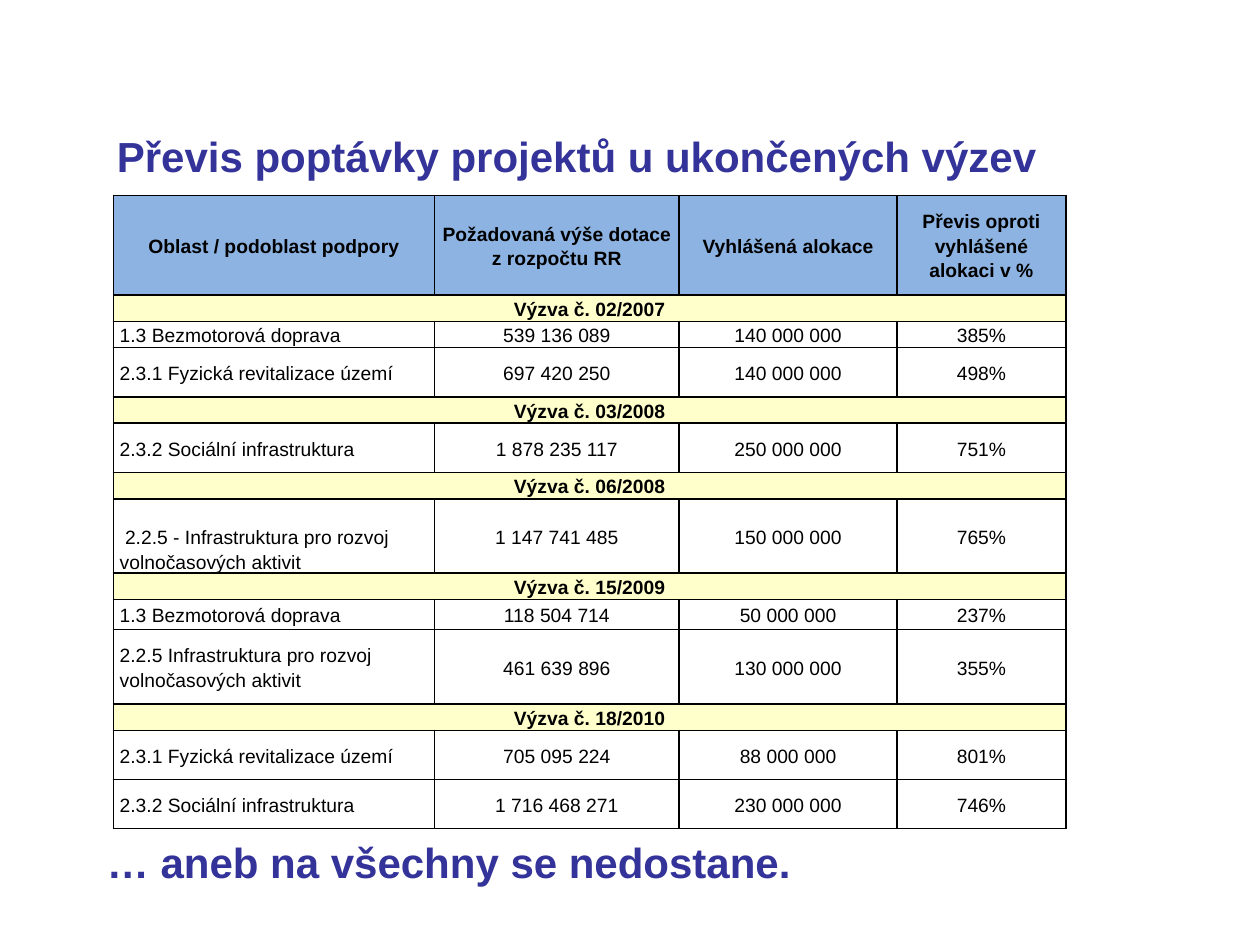
from typing import NamedTuple
from lxml import etree
from pptx import Presentation
from pptx import util as u
from pptx.dml import color
from pptx.enum import text
from pptx.oxml import ns

FONT = "Arial"
NAVY, BLACK, BLUE, CREAM = "333399", "000000", "8DB3E2", "FFFFCC"
MID, LOW = text.MSO_ANCHOR.MIDDLE, text.MSO_ANCHOR.BOTTOM
LEFT, MEAN = text.PP_ALIGN.LEFT, text.PP_ALIGN.CENTER


class Title(NamedTuple):
    left: float
    top: float
    width: float
    words: str


class Row(NamedTuple):
    high: float
    cells: tuple[str, ...]
    fill: str = ""
    anchor: text.MSO_ANCHOR = MID  # anchor of the first cell


def call(name: str) -> Row:
    """Band that opens the projects of one call."""
    return Row(0.21, (f"Výzva č. {name}",), CREAM)


TITLES = (
    Title(0.83, 0.99, 7.66, "Převis poptávky projektů u ukončených výzev"),
    Title(0.75, 6.59, 5.68, "… aneb na všechny se nedostane."),
)
COLS = (2.55, 1.94, 1.73, 1.34)
ROWS = (
    Row(0.79, ("Oblast / podoblast podpory", "Požadovaná výše dotace z rozpočtu RR",
               "Vyhlášená alokace", "Převis oproti vyhlášené alokaci v %"), BLUE),
    call("02/2007"),
    Row(0.21, ("1.3 Bezmotorová doprava", "539 136 089", "140 000 000", "385%")),
    Row(0.39, ("2.3.1 Fyzická revitalizace území", "697 420 250", "140 000 000", "498%")),
    call("03/2008"),
    Row(0.39, ("2.3.2 Sociální infrastruktura", "1 878 235 117", "250 000 000", "751%")),
    call("06/2008"),
    Row(0.59, (" 2.2.5 - Infrastruktura pro rozvoj volnočasových aktivit",
               "1 147 741 485", "150 000 000", "765%"), anchor=LOW),
    call("15/2009"),
    Row(0.24, ("1.3 Bezmotorová doprava", "118 504 714", "50 000 000", "237%")),
    Row(0.59, ("2.2.5 Infrastruktura pro rozvoj volnočasových aktivit",
               "461 639 896", "130 000 000", "355%")),
    call("18/2010"),
    Row(0.39, ("2.3.1 Fyzická revitalizace území", "705 095 224", "88 000 000", "801%")),
    Row(0.39, ("2.3.2 Sociální infrastruktura", "1 716 468 271", "230 000 000", "746%")),
)


def paint(target, tone: str) -> None:
    target.rgb = color.RGBColor.from_string(tone)


def add_run(para, words: str, size: float, tone: str, bold: bool) -> None:
    run = para.add_run()
    run.text = words
    run.font.name, run.font.size, run.font.bold = FONT, u.Pt(size), bold
    paint(run.font.color, tone)


def add_title(slide, title: Title) -> None:
    box = slide.shapes.add_textbox(u.Inches(title.left), u.Inches(title.top),
                                   u.Inches(title.width), u.Inches(0.51))
    frame = box.text_frame
    frame.word_wrap = False
    frame.auto_size = text.MSO_AUTO_SIZE.SHAPE_TO_FIT_TEXT
    add_run(frame.paragraphs[0], title.words, 24, NAVY, True)


def add_edges(cell) -> None:
    props = cell._tc.get_or_add_tcPr()
    for side in ("a:lnL", "a:lnR", "a:lnT", "a:lnB"):
        line = etree.SubElement(props, ns.qn(side), w=str(u.Pt(1)))
        fill = etree.SubElement(line, ns.qn("a:solidFill"))
        etree.SubElement(fill, ns.qn("a:srgbClr"), val=BLACK)


def style_cell(cell, tone: str) -> None:
    add_edges(cell)
    if tone:
        cell.fill.solid()
        paint(cell.fill.fore_color, tone)
    else:
        cell.fill.background()
    cell.margin_left = cell.margin_right = u.Inches(0.05)
    cell.margin_top = cell.margin_bottom = 0
    cell.vertical_anchor = MID


def add_row(table, index: int, row: Row) -> None:
    table.rows[index].height = u.Inches(row.high)
    cells = list(table.rows[index].cells)
    for cell in cells:
        style_cell(cell, row.fill)
    cells[0].vertical_anchor = row.anchor
    if len(row.cells) == 1:
        cells[0].merge(cells[-1])
    for col, (cell, words) in enumerate(zip(cells, row.cells)):
        para = cell.text_frame.paragraphs[0]
        para.alignment = MEAN if col or row.fill else LEFT
        para.line_spacing = 1.15
        add_run(para, words, 11, BLACK, bool(row.fill))


def add_grid(slide) -> None:
    frame = slide.shapes.add_table(
        len(ROWS), len(COLS), u.Inches(0.9), u.Inches(1.55),
        u.Inches(sum(COLS)), u.Inches(sum(row.high for row in ROWS)))
    table = frame.table
    table.first_row = table.horz_banding = False
    for col, width in zip(table.columns, COLS):
        col.width = u.Inches(width)
    for index, row in enumerate(ROWS):
        add_row(table, index, row)


def main() -> None:
    deck = Presentation()
    deck.slide_width, deck.slide_height = u.Inches(10), u.Inches(7.5)
    slide = deck.slides.add_slide(deck.slide_layouts[6])
    # Table of calls
    add_grid(slide)
    # Heading and closing line
    for title in TITLES:
        add_title(slide, title)
    deck.save("out.pptx")


if __name__ == "__main__":
    main()
